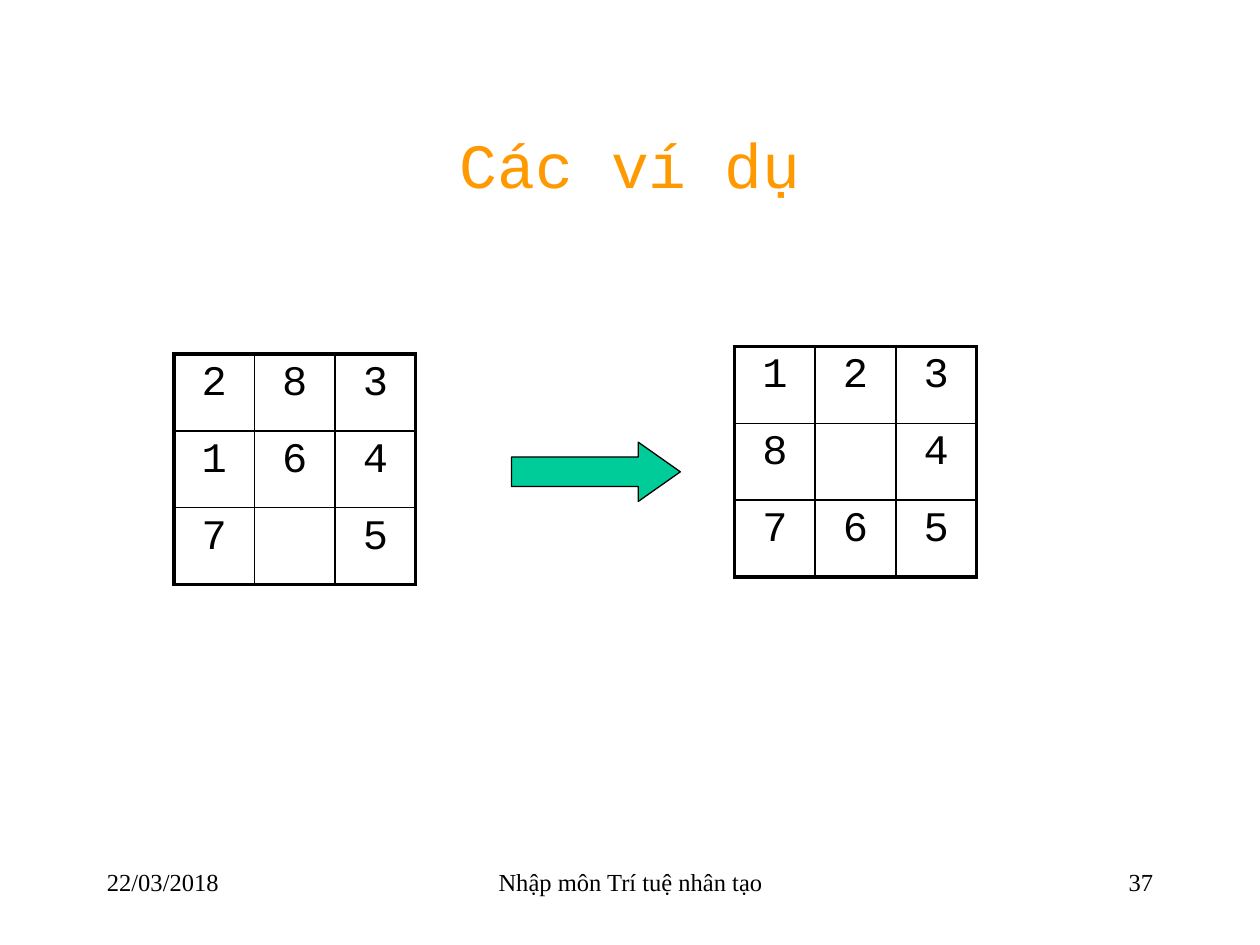
from lxml.etree import SubElement
from pptx import Presentation
from pptx.dml.color import RGBColor
from pptx.enum.shapes import MSO_SHAPE as Shape
from pptx.enum.text import MSO_ANCHOR as Anchor, PP_ALIGN as Align
from pptx.oxml.ns import qn
from pptx.util import Inches, Pt

BLACK = RGBColor(0x00, 0x00, 0x00)
ORANGE = RGBColor(0xFF, 0x99, 0x00)
GREEN = RGBColor(0x00, 0xCC, 0x99)
MONO = "Courier New"
SERIF = "Times New Roman"
OUTER, INNER = 2.25, 1


def write(frame, text, *, font=SERIF, size=14, color=BLACK, align=Align.LEFT):
    paragraph = frame.paragraphs[0]
    paragraph.alignment = align
    run = paragraph.add_run()
    run.text = text
    run.font.name = font
    run.font.size = Pt(size)
    run.font.color.rgb = color


def set_borders(cell, widths):
    """Draw cell borders; widths maps L, R, T, B to points."""
    properties = cell._tc.get_or_add_tcPr()
    for position, (side, width) in enumerate(widths.items()):
        line = SubElement(properties, qn(f"a:ln{side}"), w=str(Pt(width)))
        fill = SubElement(line, qn("a:solidFill"))
        SubElement(fill, qn("a:srgbClr"), val=str(BLACK))
        properties.insert(position, line)


class PuzzleSlide:
    tile_width, tile_height = 0.64, 0.61

    def __init__(self, deck):
        self.shapes = deck.slides.add_slide(deck.slide_layouts[6]).shapes

    def text(self, left, top, width, height, text, anchor=Anchor.TOP, **style):
        box = self.shapes.add_textbox(*map(Inches, (left, top, width, height)))
        box.text_frame.word_wrap = True
        box.text_frame.vertical_anchor = anchor
        write(box.text_frame, text, **style)

    def board(self, left, top, tiles):
        count = len(tiles)
        last = count - 1
        board = self.shapes.add_table(
            count, count, Inches(left), Inches(top),
            Inches(count * self.tile_width), Inches(count * self.tile_height),
        ).table
        board.first_row = board.horz_banding = False
        for column in board.columns:
            column.width = Inches(self.tile_width)
        for r, row in enumerate(tiles):
            board.rows[r].height = Inches(self.tile_height)
            for c, tile in enumerate(row):
                cell = board.cell(r, c)
                cell.fill.background()
                edges = {"L": c == 0, "R": c == last, "T": r == 0, "B": r == last}
                set_borders(cell, {side: OUTER if edge else INNER
                                   for side, edge in edges.items()})
                if tile != " ":
                    write(cell.text_frame, tile, font=MONO, size=24,
                          align=Align.CENTER)

    def arrow(self, left, top, width, height):
        arrow = self.shapes.add_shape(
            Shape.RIGHT_ARROW, *map(Inches, (left, top, width, height)))
        arrow.adjustments[1] = 0.71
        arrow.shadow.inherit = False
        arrow.fill.solid()
        arrow.fill.fore_color.rgb = GREEN
        arrow.line.color.rgb = BLACK
        arrow.line.width = Pt(0.75)


def main():
    deck = Presentation()
    deck.slide_width, deck.slide_height = Inches(10), Inches(7.5)
    slide = PuzzleSlide(deck)

    # Footer
    for left, width, text, align in (
        (0.75, 2.08, "22/03/2018", Align.LEFT),
        (3.42, 3.17, "Nhập môn Trí tuệ nhân tạo", Align.CENTER),
        (7.17, 2.08, "37", Align.RIGHT),
    ):
        slide.text(left, 6.83, width, 0.5, text, align=align)

    # Title
    slide.text(0.75, 0.67, 8.5, 1.25, "Các ví dụ", anchor=Anchor.MIDDLE,
               font=MONO, size=36, color=ORANGE, align=Align.CENTER)

    # Start and goal boards, with the arrow between them
    slide.board(1.38, 2.81, ("283", "164", "7 5"))
    slide.board(5.83, 2.75, ("123", "8 4", "765"))
    slide.arrow(4.06, 3.51, 1.34, 0.47)

    deck.save("out.pptx")


if __name__ == "__main__":
    main()
